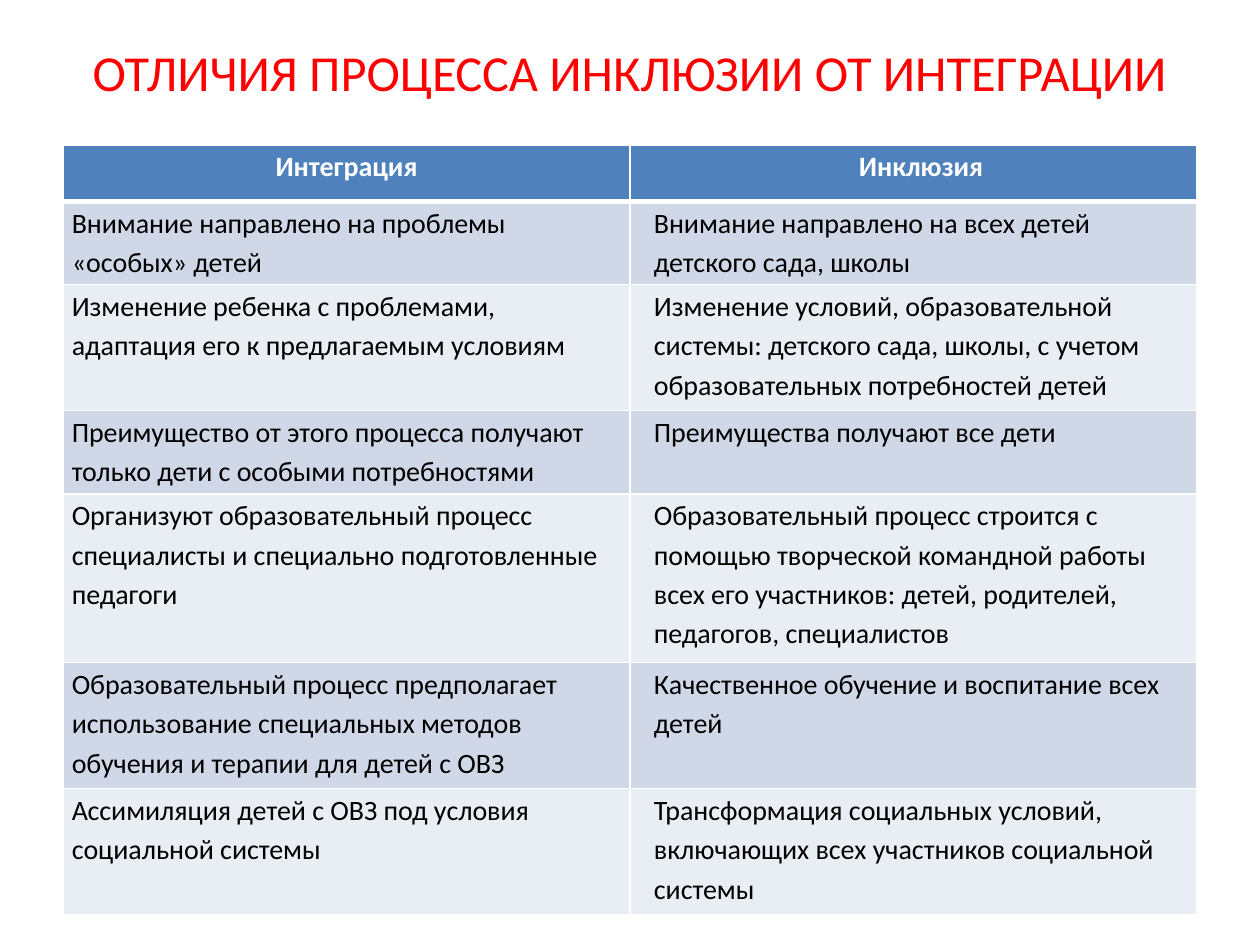
import pptx
import pptx.util
import pptx.dml.color
import pptx.enum.text
import lxml.etree
from dataclasses import dataclass

Inches = pptx.util.Inches
Pt = pptx.util.Pt
Align = pptx.enum.text.PP_ALIGN
Anchor = pptx.enum.text.MSO_ANCHOR

TITLE = "ОТЛИЧИЯ ПРОЦЕССА ИНКЛЮЗИИ ОТ ИНТЕГРАЦИИ"
ROWS = [
    (0.45, "Интеграция", "Инклюзия"),
    (0.66, "Внимание направлено на проблемы «особых» детей",
     "Внимание направлено на всех детей детского сада, школы"),
    (1, "Изменение ребенка с проблемами, адаптация его к предлагаемым условиям",
     "Изменение условий, образовательной системы: детского сада, школы, "
     "с учетом образовательных потребностей детей"),
    (0.66, "Преимущество от этого процесса получают только дети с особыми потребностями",
     "Преимущества получают все дети"),
    (1.34, "Организуют образовательный процесс специалисты и специально подготовленные педагоги",
     "Образовательный процесс строится с помощью творческой командной работы "
     "всех его участников: детей, родителей, педагогов, специалистов"),
    (1, "Образовательный процесс предполагает использование специальных методов "
     "обучения и терапии для детей с ОВЗ",
     "Качественное обучение и воспитание всех детей"),
    (1, "Ассимиляция детей с ОВЗ под условия социальной системы",
     "Трансформация социальных условий,\nвключающих всех участников социальной системы"),
]
INDENTS = (0, 0.12)


@dataclass(frozen=True)
class Theme:
    font: str = "Calibri"
    title_size: float = 28.8
    body_size: float = 16
    title: str = "FF0000"
    header: str = "4F81BD"
    header_text: str = "FFFFFF"
    body_text: str = "000000"
    bands: tuple = ("D0D8E8", "E9EDF4")
    border: str = "FFFFFF"
    thin: float = 1
    thick: float = 3


THEME = Theme()


def rgb(value):
    return pptx.dml.color.RGBColor.from_string(value)


def style_spans(para, size, color, bold=False):
    for span in para.runs:
        span.font.name = THEME.font
        span.font.size = Pt(size)
        span.font.bold = bold
        span.font.color.rgb = rgb(color)


def set_borders(cell, widths):
    properties = cell._tc.get_or_add_tcPr()
    for position, (side, width) in enumerate(widths.items()):
        line = pptx.oxml.parse_xml(
            f'<a:ln{side} {pptx.oxml.ns.nsdecls("a")} w="{Pt(width)}">'
            f'<a:solidFill><a:srgbClr val="{THEME.border}"/></a:solidFill></a:ln{side}>')
        properties.insert(position, line)


def add_title(page):
    box = page.shapes.add_textbox(Inches(0.5), Inches(0.21), Inches(9), Inches(0.71))
    frame = box.text_frame
    frame.word_wrap = True
    frame.vertical_anchor = Anchor.MIDDLE
    frame.text = TITLE
    para = frame.paragraphs[0]
    para.alignment = Align.CENTER
    style_spans(para, THEME.title_size, THEME.title)


def fill_cell(cell, text, row, indent):
    header = row == 0
    cell.fill.solid()
    cell.fill.fore_color.rgb = rgb(THEME.header if header else THEME.bands[(row - 1) % 2])
    cell.margin_left = cell.margin_right = Inches(0.07)
    cell.margin_top = cell.margin_bottom = 0
    set_borders(cell, {
        "L": THEME.thin, "R": THEME.thin,
        "T": THEME.thick if row == 1 else THEME.thin,
        "B": THEME.thick if header else THEME.thin,
    })
    cell.text_frame.text = text
    for para in cell.text_frame.paragraphs:
        para.alignment = Align.CENTER if header else Align.LEFT
        para.line_spacing = 1.15
        para._p.get_or_add_pPr().set("marL", str(Inches(indent)))
        style_spans(para, THEME.body_size,
                    THEME.header_text if header else THEME.body_text, header)


def add_comparison(page):
    total = sum(height for height, *_ in ROWS)
    table = page.shapes.add_table(len(ROWS), len(INDENTS), Inches(0.5), Inches(1.15),
                                  Inches(9), Inches(total)).table
    for row, (height, *texts) in enumerate(ROWS):
        table.rows[row].height = Inches(height)
        for column, (text, indent) in enumerate(zip(texts, INDENTS)):
            fill_cell(table.cell(row, column), text, row, indent)


def main():
    deck = pptx.Presentation()
    deck.slide_width, deck.slide_height = Inches(10), Inches(7.5)
    page = deck.slides.add_slide(deck.slide_layouts[6])
    add_title(page)
    add_comparison(page)
    deck.save("out.pptx")


if __name__ == "__main__":
    main()
